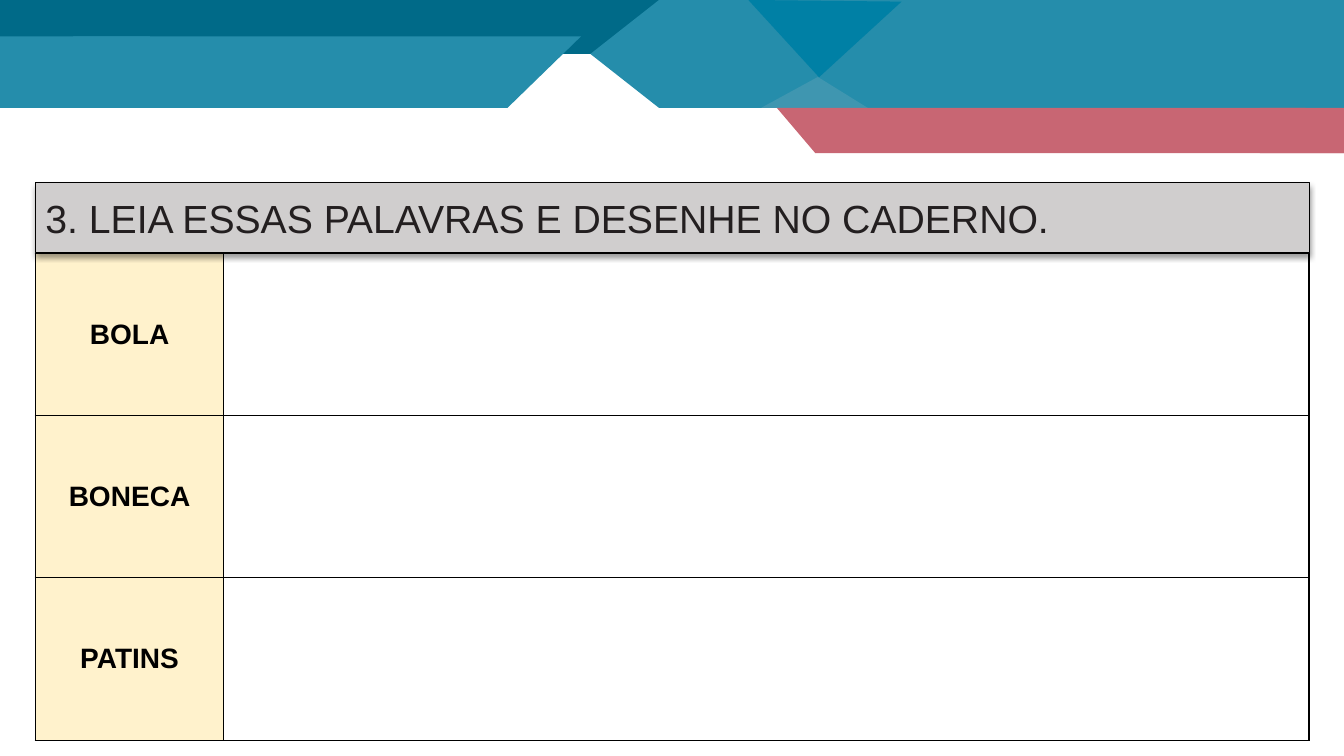
from dataclasses import dataclass

from lxml import etree
from pptx import Presentation
from pptx import util as u
from pptx.dml.color import RGBColor
from pptx.enum import shapes, text
from pptx.oxml import parse_xml
from pptx.oxml.ns import nsdecls, qn

COLORS = {
    "dark": "006A88",
    "teal": "258DAB",
    "light": "3F96B0",
    "blue": "0080A5",
    "red": "C86673",
    "outline": "325491",
    "header": "D0CECE",
    "cream": "FFF2CC",
    "ink": "231F20",
    "black": "000000",
}
FONT = "Arial"
LEFT, HEADER_TOP, WIDTH, HEADER_HEIGHT = 0.89, 4.6, 32.1, 1.76
TABLE_TOP, WORD_WIDTH, ROW_HEIGHT = 6.38, 4.75, 4.09
WORDS = ["BOLA", "BONECA", "PATINS"]
Kind = shapes.MSO_SHAPE


@dataclass
class BannerPiece:
    kind: Kind
    left: float
    top: float
    width: float
    height: float
    color: str
    adjustments: tuple[float, ...] = ()
    flipped: bool = False
    rotation: float = 0
    outline: str | None = None


BANNER = [
    BannerPiece(Kind.HALF_FRAME, 12.01, 0, 6.27, 2.41, "dark", (0.833, 0.77), True, outline="outline"),
    BannerPiece(Kind.PARALLELOGRAM, 0, 0, 18.29, 1.36, "dark", (1.028,)),
    BannerPiece(Kind.RECTANGLE, 0, 0, 3.78, 1.36, "dark"),
    BannerPiece(Kind.PARALLELOGRAM, 0, 0.92, 14.64, 1.8, "teal", (1.028,)),
    BannerPiece(Kind.RECTANGLE, 0, 0.92, 3.78, 1.8, "teal"),
    BannerPiece(Kind.PENTAGON, 14.88, 0, 18.99, 2.72, "teal", (0.636,), True),
    BannerPiece(Kind.ISOSCELES_TRIANGLE, 19.18, 1.94, 2.69, 0.78, "light", (0.532,)),
    BannerPiece(Kind.PARALLELOGRAM, 19.58, 2.72, 14.29, 1.14, "red", (0.85,), True),
    BannerPiece(Kind.RECTANGLE, 31.75, 2.72, 2.12, 1.14, "red"),
    BannerPiece(Kind.RIGHT_TRIANGLE, 19.38, -1.3, 2.82, 2.64, "blue", rotation=317.5),
]


def rgb(name: str) -> RGBColor:
    return RGBColor.from_string(COLORS[name])


def draw_banner_piece(slide, piece: BannerPiece) -> None:
    shape = slide.shapes.add_shape(
        piece.kind, u.Cm(piece.left), u.Cm(piece.top), u.Cm(piece.width), u.Cm(piece.height))
    shape.shadow.inherit = False
    shape.fill.solid()
    shape.fill.fore_color.rgb = rgb(piece.color)
    if piece.outline:
        shape.line.color.rgb = rgb(piece.outline)
        shape.line.width = u.Pt(1)
    else:
        shape.line.fill.background()
    for index, value in enumerate(piece.adjustments):
        shape.adjustments[index] = value
    shape.rotation = piece.rotation
    if piece.flipped:
        shape.element.spPr.find(qn("a:xfrm")).set("flipH", "1")


def draw_borders(cell) -> None:
    properties = cell._tc.get_or_add_tcPr()
    for index, side in enumerate(("lnL", "lnR", "lnT", "lnB")):
        properties.insert(index, parse_xml(
            f'<a:{side} {nsdecls("a")} w="12700"><a:solidFill>'
            f'<a:srgbClr val="{COLORS["black"]}"/></a:solidFill></a:{side}>'))


def draw_word_table(slide) -> None:
    frame = slide.shapes.add_table(
        len(WORDS), 2, u.Cm(LEFT), u.Cm(TABLE_TOP), u.Cm(WIDTH), u.Cm(ROW_HEIGHT * len(WORDS)))
    table = frame.table
    table.first_row = table.horz_banding = False
    table.columns[0].width = u.Cm(WORD_WIDTH)
    table.columns[1].width = u.Cm(WIDTH - WORD_WIDTH)
    for row, word in enumerate(WORDS):
        table.rows[row].height = u.Cm(ROW_HEIGHT)
        word_cell, drawing_cell = table.cell(row, 0), table.cell(row, 1)
        word_cell.fill.solid()
        word_cell.fill.fore_color.rgb = rgb("cream")
        drawing_cell.fill.background()
        for cell in (word_cell, drawing_cell):
            draw_borders(cell)
        word_cell.text = word
        word_cell.vertical_anchor = text.MSO_ANCHOR.MIDDLE
        paragraph = word_cell.text_frame.paragraphs[0]
        paragraph.alignment = text.PP_ALIGN.CENTER
        paragraph.font.name = FONT
        paragraph.font.size = u.Pt(20)
        paragraph.font.bold = True
        paragraph.font.color.rgb = rgb("black")


def draw_header(slide, wording: str) -> None:
    title = slide.shapes.title
    title.left, title.top = u.Cm(LEFT), u.Cm(HEADER_TOP)
    title.width, title.height = u.Cm(WIDTH), u.Cm(HEADER_HEIGHT)

    # Rounded top corners, fill, outline and shadow
    properties = title.element.spPr
    geometry = parse_xml(
        f'<a:prstGeom {nsdecls("a")} prst="round2SameRect"><a:avLst/></a:prstGeom>')
    properties.find(qn("a:xfrm")).addnext(geometry)
    title.fill.solid()
    title.fill.fore_color.rgb = rgb("header")
    title.line.color.rgb = rgb("black")
    title.line.width = u.Pt(0.75)
    effects = etree.SubElement(properties, qn("a:effectLst"))
    effects.append(parse_xml(
        f'<a:outerShdw {nsdecls("a")} blurRad="{u.Pt(4)}" dist="{u.Pt(3)}" dir="5400000">'
        f'<a:srgbClr val="{COLORS["black"]}"><a:alpha val="40000"/></a:srgbClr></a:outerShdw>'))

    # Wording
    frame = title.text_frame
    frame.text = wording
    frame.word_wrap = True
    frame.auto_size = text.MSO_AUTO_SIZE.NONE
    frame.vertical_anchor = text.MSO_ANCHOR.MIDDLE
    paragraph = frame.paragraphs[0]
    paragraph.alignment = text.PP_ALIGN.JUSTIFY
    paragraph.font.name = FONT
    paragraph.font.size = u.Pt(28)
    paragraph.font.color.rgb = rgb("ink")

    # In front of the table
    slide.shapes._spTree.append(title.element)


def main() -> None:
    presentation = Presentation()
    presentation.slide_width, presentation.slide_height = u.Cm(33.87), u.Cm(19.05)
    slide = presentation.slides.add_slide(presentation.slide_layouts[5])
    for piece in BANNER:
        draw_banner_piece(slide, piece)
    draw_word_table(slide)
    draw_header(slide, "3. LEIA ESSAS PALAVRAS E DESENHE NO CADERNO.")
    presentation.save("out.pptx")


if __name__ == "__main__":
    main()
